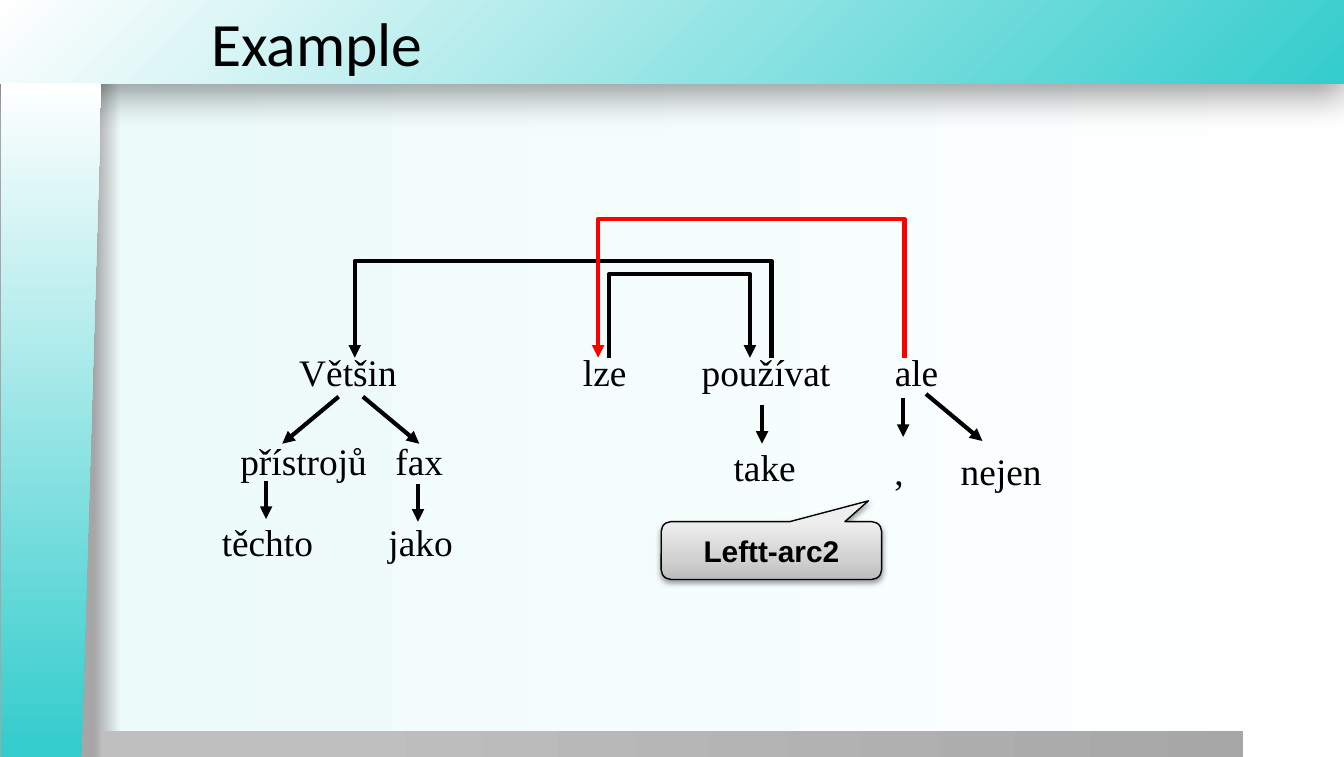
from lxml import etree
from pptx import Presentation
from pptx.dml.color import RGBColor
from pptx.enum.shapes import MSO_CONNECTOR, MSO_SHAPE
from pptx.enum.text import MSO_ANCHOR, MSO_AUTO_SIZE, PP_ALIGN
from pptx.oxml.ns import qn
from pptx.util import Inches, Pt

STRAIGHT = MSO_CONNECTOR.STRAIGHT
RECTANGLE = MSO_SHAPE.RECTANGLE
MANUAL_INPUT = MSO_SHAPE.FLOWCHART_MANUAL_INPUT
CALLOUT = MSO_SHAPE.ROUNDED_RECTANGULAR_CALLOUT
MIDDLE = MSO_ANCHOR.MIDDLE
NO_AUTOFIT = MSO_AUTO_SIZE.NONE
LEFT, CENTER = PP_ALIGN.LEFT, PP_ALIGN.CENTER

COLORS = {
    "black": "000000", "red": "FF0000", "white": "FFFFFF",
    "teal": "34CCCC", "mint": "EDFBFB", "edge": "A6A6A6",
    "bar_light": "BFBFBF", "bar_dark": "A7A7A7",
    "callout_dark": "BDBDBD", "callout_mid": "D1D1D1", "callout_light": "EEEEEE",
}
WORD_WIDTH, WORD_HEIGHT = 1.3, 0.3
ARC_FOOT = 2.66

# (word, centre x, top)
WORDS = [
    ("Většin", 2.59, 2.6), ("lze", 4.5, 2.6), ("používat", 5.7, 2.6), ("ale", 6.82, 2.6),
    ("přístrojů", 2.26, 3.26), ("fax", 3.12, 3.26),
    ("těchto", 1.99, 3.86), ("jako", 3.13, 3.86),
    ("take", 5.69, 3.3), (",", 6.69, 3.33), ("nejen", 7.45, 3.33),
]
# (from x, to x, top, color)
ARCS = [
    (4.53, 5.58, 2.04, "black"),
    (5.74, 2.64, 1.94, "black"),
    (6.73, 4.45, 1.63, "red"),
]
# (from x, from y, to x, to y)
ARROWS = [
    (2.52, 2.95, 2.1, 3.3), (2.7, 2.95, 3.12, 3.3),
    (1.98, 3.58, 1.98, 3.86), (3.11, 3.6, 3.11, 3.88),
    (5.67, 3.01, 5.67, 3.3),
    (6.72, 2.96, 6.72, 3.25), (6.89, 2.93, 7.31, 3.28),
]


def add_child(parent, tag, **attributes):
    values = {name: str(value) for name, value in attributes.items()}
    return etree.SubElement(parent, qn(tag), values)


def set_gradient(properties, stops, angle=None):
    """Replace a solid fill; without an angle the gradient spreads from the bottom right."""
    gradient = etree.Element(qn("a:gradFill"), rotWithShape="1")
    stop_list = add_child(gradient, "a:gsLst")
    for position, color in stops:
        stop = add_child(stop_list, "a:gs", pos=position * 1000)
        add_child(stop, "a:srgbClr", val=COLORS[color])
    if angle is None:
        spread = add_child(gradient, "a:path", path="circle")
        add_child(spread, "a:fillToRect", l=100000, t=100000)
    else:
        add_child(gradient, "a:lin", ang=angle * 60000, scaled=0)
    properties.replace(properties.find(qn("a:solidFill")), gradient)


def set_shadow(shape, opacity, blur, distance):
    effects = shape.element.spPr.find(qn("a:effectLst"))
    shadow = add_child(effects, "a:outerShdw", blurRad=Pt(blur), dist=Pt(distance),
                       dir=90 * 60000, algn="t", rotWithShape=0)
    color = add_child(shadow, "a:srgbClr", val=COLORS["black"])
    add_child(color, "a:alpha", val=opacity * 1000)


class TreeSlide:
    def __init__(self, slide):
        self.slide = slide
        self.shapes = slide.shapes

    def background(self, stops):
        self.slide.background.fill.solid()
        set_gradient(self.slide.element.find(".//" + qn("p:bgPr")), stops, 0)

    def set_text(self, frame, text, font_name, size, alignment, bold=False):
        frame.text = text
        paragraph = frame.paragraphs[0]
        paragraph.alignment = alignment
        font = paragraph.font
        font.name, font.size, font.bold = font_name, Pt(size), bold
        font.color.rgb = RGBColor.from_string(COLORS["black"])

    def title(self, text):
        title = self.shapes.title
        title.left, title.top = Inches(1.47), Inches(0.01)
        title.width, title.height = Inches(8.23), Inches(0.61)
        title.text_frame.vertical_anchor = MIDDLE
        title.text_frame.auto_size = NO_AUTOFIT
        self.set_text(title.text_frame, text, "Calibri", 33, LEFT)
        title.element.getparent().append(title.element)  # bring to front

    def panel(self, kind, box, stops, angle=None):
        shape = self.shapes.add_shape(kind, *map(Inches, box))
        shape.shadow.inherit = False
        shape.line.fill.background()
        shape.fill.solid()
        set_gradient(shape.element.spPr, stops, angle)
        return shape

    def word(self, text, center, top):
        box = self.shapes.add_textbox(Inches(center - WORD_WIDTH / 2), Inches(top),
                                      Inches(WORD_WIDTH), Inches(WORD_HEIGHT))
        frame = box.text_frame
        frame.word_wrap = True
        frame.margin_left = frame.margin_right = frame.margin_top = frame.margin_bottom = 0
        self.set_text(frame, text, "Times New Roman", 20, CENTER)

    def style_arrow(self, shape, color):
        shape.line.color.rgb = RGBColor.from_string(COLORS[color])
        shape.line.width = Pt(2.25)
        add_child(shape.element.spPr.find(qn("a:ln")), "a:tailEnd", type="triangle")

    def arrow(self, *ends):
        connector = self.shapes.add_connector(STRAIGHT, *map(Inches, ends))
        self.style_arrow(connector, "black")
        add_child(connector.element.spPr, "a:effectLst")

    def arc(self, start, end, top, color):
        builder = self.shapes.build_freeform(Inches(start), Inches(ARC_FOOT))
        corners = [(start, top), (end, top), (end, ARC_FOOT)]
        builder.add_line_segments([(Inches(x), Inches(y)) for x, y in corners], close=False)
        shape = builder.convert_to_shape()
        shape.shadow.inherit = False
        shape.fill.background()
        self.style_arrow(shape, color)

    def callout(self, text, box):
        stops = [(0, "callout_dark"), (35, "callout_mid"), (100, "callout_light")]
        shape = self.panel(CALLOUT, box, stops, 270)
        for index, value in enumerate((0.44, -0.86, 0.17)):
            shape.adjustments[index] = value
        shape.line.color.rgb = RGBColor.from_string(COLORS["black"])
        shape.line.width = Pt(0.75)
        set_shadow(shape, 38, 3.1, 1.6)
        shape.text_frame.vertical_anchor = MIDDLE
        self.set_text(shape.text_frame, text, "Arial", 16, CENTER, bold=True)


def main():
    presentation = Presentation()
    presentation.slide_width, presentation.slide_height = Inches(10), Inches(5.63)
    tree = TreeSlide(presentation.slides.add_slide(presentation.slide_layouts[5]))

    tree.background([(7, "edge"), (9, "mint"), (100, "white")])
    banner = tree.panel(RECTANGLE, (-0.01, 0, 10.01, 0.62), [(0, "teal"), (100, "white")])
    set_shadow(banner, 40, 20, 6)
    tree.panel(RECTANGLE, (0.75, 5.44, 8.5, 0.2), [(20, "bar_light"), (100, "bar_dark")], 0)
    sidebar = tree.panel(MANUAL_INPUT, (-2.13, 2.75, 5.02, 0.75),
                         [(1, "teal"), (100, "white")], 0)
    sidebar.rotation = 270
    sidebar.element.spPr.find(qn("a:xfrm")).set("flipV", "1")

    tree.title("Example")
    for arc in ARCS:
        tree.arc(*arc)
    for word in WORDS:
        tree.word(*word)
    for arrow in ARROWS:
        tree.arrow(*arrow)
    tree.callout("Leftt-arc2", (4.92, 3.88, 1.64, 0.43))
    presentation.save("out.pptx")


if __name__ == "__main__":
    main()
